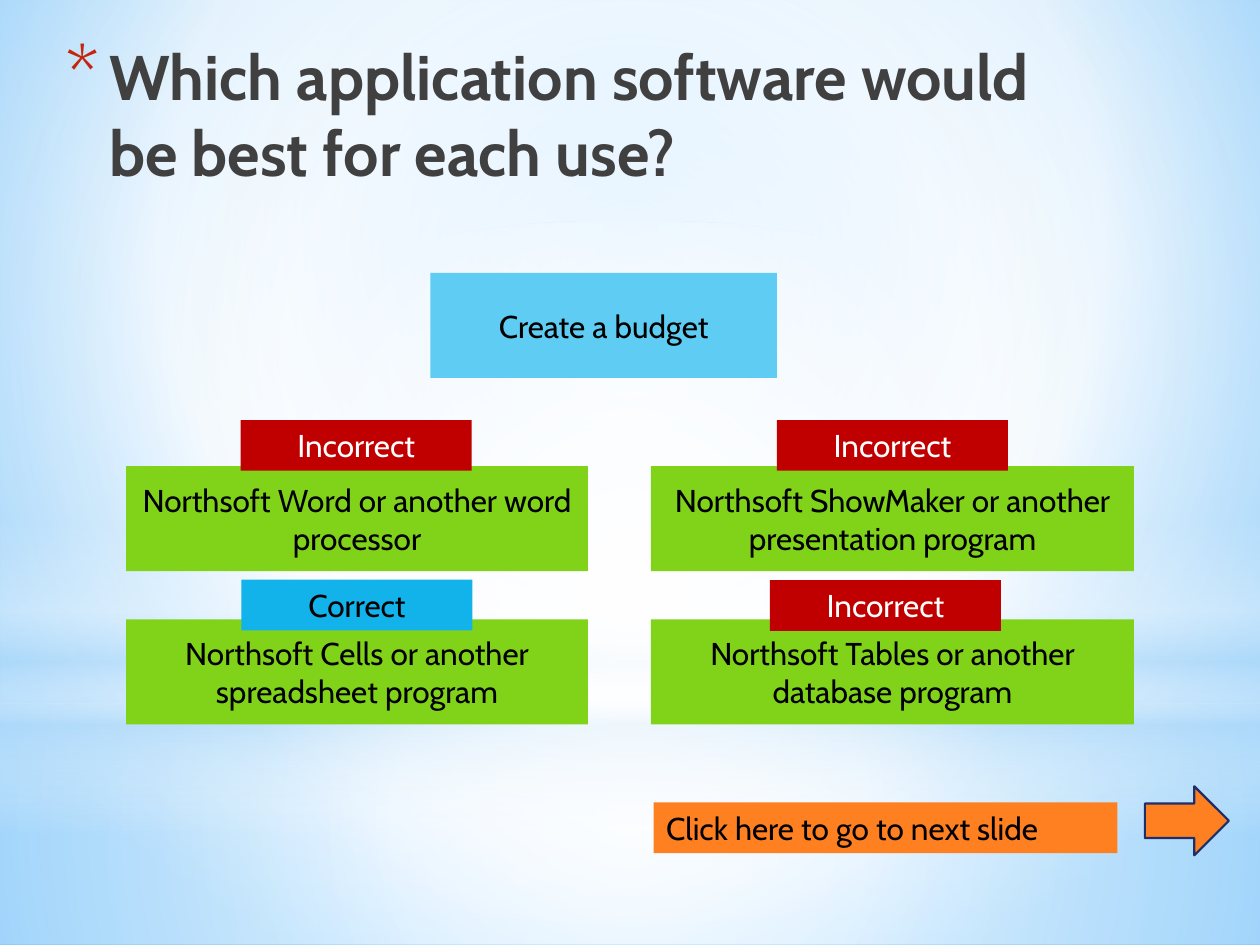
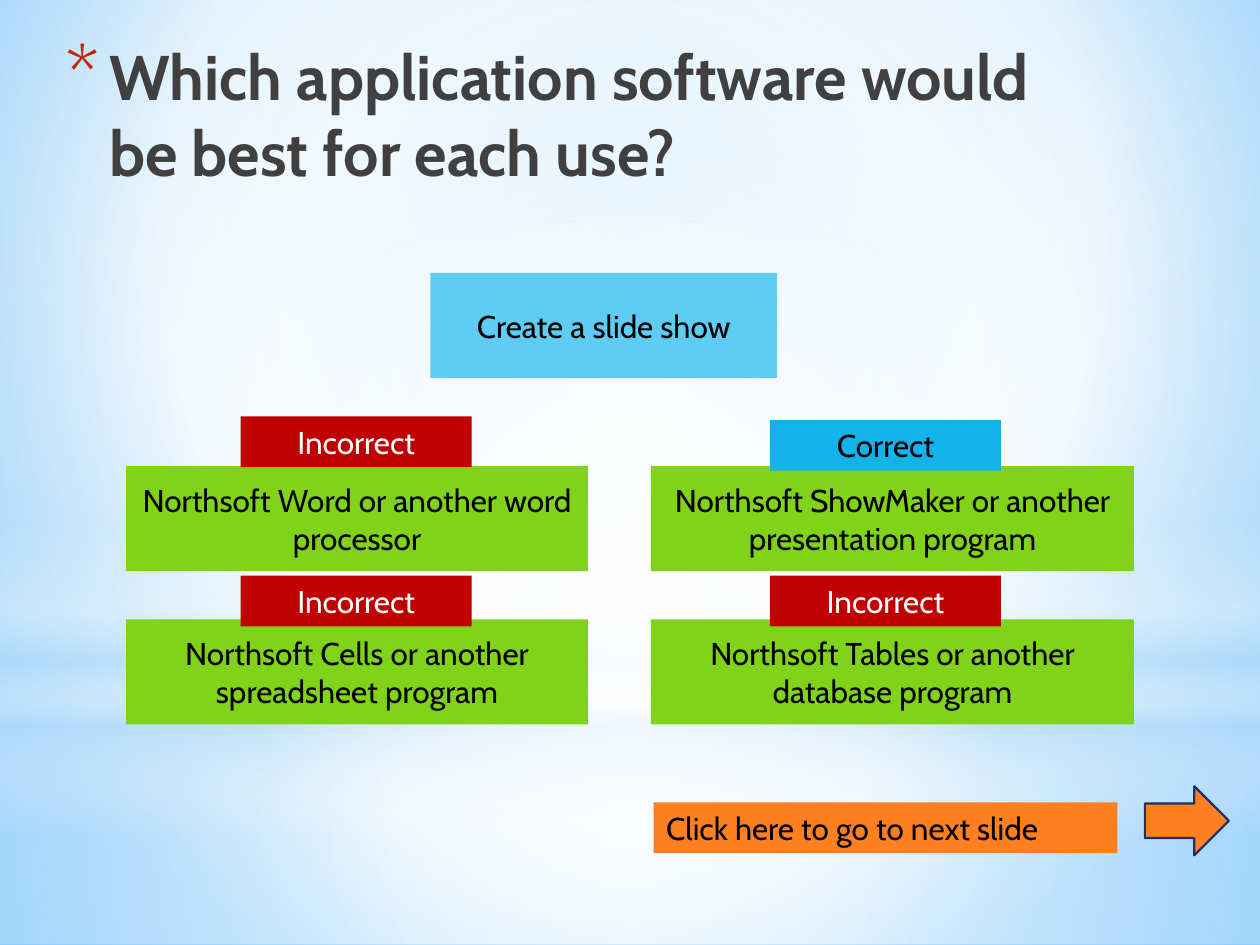
from lxml.etree import SubElement
from pptx import Presentation
from pptx.dml.color import RGBColor
from pptx.enum.shapes import MSO_SHAPE
from pptx.enum.text import MSO_ANCHOR, MSO_AUTO_SIZE, PP_ALIGN
from pptx.oxml.ns import qn
from pptx.util import Pt

FONT = "Cabin"
BLACK, WHITE, TITLE_GRAY = "000000", "FFFFFF", "404040"
GREEN, SKY, BLUE = "81D31A", "5ECCF3", "12B2EB"
RED, ORANGE, NAVY, BULLET_RED = "C00000", "FF8021", "1F2E69", "C3260C"
PALE = "B4DCFA"

TITLE = "Which application software would be best for each use?"
PROGRAMS = [
    "Northsoft Word or another word processor",
    "Northsoft ShowMaker or another presentation program",
    "Northsoft Cells or another spreadsheet program",
    "Northsoft Tables or another database program",
]
COLUMNS = [(72, 264), (372, 276)]  # left, width
ROW_TOP, ROW_STEP, CARD_HEIGHT = 266.4, 87.6, 60
LABEL_WIDTH, LABEL_HEIGHT = 132, 29

# Task, then its verdicts: correct?, left, top
QUESTIONS = [
    ("Create a budget",
     [(True, 138, 331.2), (False, 444, 240), (False, 440, 331.5), (False, 137.5, 240)]),
    ("Create a slide show",
     [(True, 440, 240), (False, 440, 329), (False, 137.5, 329), (False, 137.5, 238)]),
]


def rgb(hex_color):
    return RGBColor.from_string(hex_color)


def add_gradient(parent, position, stops, focus=None):
    """Insert a gradient; focus gives a circular one, otherwise it runs downward."""
    gradient = SubElement(parent, qn("a:gradFill"), rotWithShape="1")
    parent.insert(position, gradient)
    stop_list = SubElement(gradient, qn("a:gsLst"))
    for place, color, opacity in stops:
        stop = SubElement(stop_list, qn("a:gs"), pos=str(place * 1000))
        tint = SubElement(stop, qn("a:srgbClr"), val=color)
        if opacity < 100:
            SubElement(tint, qn("a:alpha"), val=str(opacity * 1000))
    if focus:
        circle = SubElement(gradient, qn("a:path"), path="circle")
        edges = {side: str(share * 1000) for side, share in zip("ltrb", focus)}
        SubElement(circle, qn("a:fillToRect"), **edges)
    else:
        SubElement(gradient, qn("a:lin"), ang="5400000", scaled="0")


def add_block(slide, kind, left, top, width, height, fill=None, outline=None):
    block = slide.shapes.add_shape(kind, Pt(left), Pt(top), Pt(width), Pt(height))
    block.shadow.inherit = False
    if fill:
        block.fill.solid()
        block.fill.fore_color.rgb = rgb(fill)
    if outline:
        block.line.color.rgb = rgb(outline)
        block.line.width = Pt(1.25)
    else:
        block.line.fill.background()
    return block


def add_card(slide, text, left, top, width, height, fill,
             color=BLACK, align=PP_ALIGN.CENTER, grow=False):
    card = add_block(slide, MSO_SHAPE.RECTANGLE, left, top, width, height, fill)
    frame = card.text_frame
    frame.word_wrap = True
    frame.vertical_anchor = MSO_ANCHOR.TOP if grow else MSO_ANCHOR.MIDDLE
    if grow:
        frame.auto_size = MSO_AUTO_SIZE.SHAPE_TO_FIT_TEXT
    paragraph = frame.paragraphs[0]
    paragraph.text = text
    paragraph.alignment = align
    paragraph.font.name = FONT
    paragraph.font.size = Pt(18)
    paragraph.font.color.rgb = rgb(color)


def add_backdrop(master, slide):
    """Draw the glow on a slide and move it to the master, for all slides."""
    master.background.fill.solid()
    properties = master._element.find(".//" + qn("p:bgPr"))
    properties.remove(properties[0])
    add_gradient(properties, 0, [(0, "9ED5FF", 100), (60, WHITE, 100), (100, "5BB9FF", 100)],
                 (20, 10, 20, 60))

    center = (50, 50, 50, 50)
    horizon = [(0, WHITE, 0), (29, WHITE, 30), (45, PALE, 40),
               (55, WHITE, 26), (65, PALE, 60), (100, WHITE, 0)]
    layers = [
        (MSO_SHAPE.RECTANGLE, 402, 138, [(0, WHITE, 91), (37, WHITE, 76), (100, PALE, 79)], center),
        (MSO_SHAPE.RECTANGLE, 0, 402, [(0, WHITE, 89), (48, WHITE, 62), (100, PALE, 79)], center),
        (MSO_SHAPE.RECTANGLE, 297, 180, horizon, None),
        (MSO_SHAPE.OVAL, 126, 402, [(0, WHITE, 100), (56, WHITE, 0)], center),
    ]
    for index, (kind, top, height, stops, focus) in enumerate(layers):
        layer = add_block(slide, kind, 0, top, 720, height)
        add_gradient(layer._element.spPr, 2, stops, focus)
        layer._element.nvSpPr.cNvPr.set("id", str(101 + index))
        master.shapes._spTree.insert(2 + index, layer._element)


def set_title(slide):
    title = slide.shapes.title
    title.left, title.top, title.width, title.height = Pt(30), Pt(18), Pt(594), Pt(90)
    frame = title.text_frame
    frame.text = TITLE
    frame.word_wrap = True
    frame.auto_size = MSO_AUTO_SIZE.NONE
    frame.vertical_anchor = MSO_ANCHOR.TOP
    paragraph = frame.paragraphs[0]
    paragraph.alignment = PP_ALIGN.LEFT
    paragraph.font.name = FONT
    paragraph.font.size = Pt(36)
    paragraph.font.bold = True
    paragraph.font.color.rgb = rgb(TITLE_GRAY)
    # Hanging asterisk bullet, ahead of the font settings
    settings = paragraph._p.get_or_add_pPr()
    settings.set("marL", str(Pt(25.2)))
    settings.set("indent", str(-Pt(25.2)))
    bullet_color = SubElement(settings, qn("a:buClr"))
    SubElement(bullet_color, qn("a:srgbClr"), val=BULLET_RED)
    bullet_size = SubElement(settings, qn("a:buSzPct"), val="128000")
    bullet_font = SubElement(settings, qn("a:buFont"), typeface=FONT)
    bullet_sign = SubElement(settings, qn("a:buChar"), char="*")
    for index, part in enumerate([bullet_color, bullet_size, bullet_font, bullet_sign]):
        settings.insert(index, part)


def add_programs(slide):
    for index, program in enumerate(PROGRAMS):
        row, column = divmod(index, 2)
        left, width = COLUMNS[column]
        add_card(slide, program, left, ROW_TOP + row * ROW_STEP, width, CARD_HEIGHT, GREEN)


def add_next_button(slide):
    add_block(slide, MSO_SHAPE.RIGHT_ARROW, 654.2, 449.3, 48, 39.5, ORANGE, NAVY)
    add_card(slide, "Click here to go to next slide", 373.5, 458.5, 265, LABEL_HEIGHT,
             ORANGE, align=PP_ALIGN.LEFT, grow=True)


def add_verdict(slide, correct, left, top):
    text, fill, color = ("Correct", BLUE, BLACK) if correct else ("Incorrect", RED, WHITE)
    add_card(slide, text, left, top, LABEL_WIDTH, LABEL_HEIGHT, fill, color, grow=True)


def main():
    prs = Presentation()
    prs.slide_width, prs.slide_height = Pt(720), Pt(540)
    title_only = prs.slide_layouts[5]
    for number, (task, verdicts) in enumerate(QUESTIONS):
        slide = prs.slides.add_slide(title_only)
        if number == 0:
            add_backdrop(prs.slide_master, slide)
        set_title(slide)
        add_programs(slide)
        add_card(slide, task, 246, 156, 198, CARD_HEIGHT, SKY)
        add_next_button(slide)
        for verdict in verdicts:
            add_verdict(slide, *verdict)
    prs.save("out.pptx")


if __name__ == "__main__":
    main()
